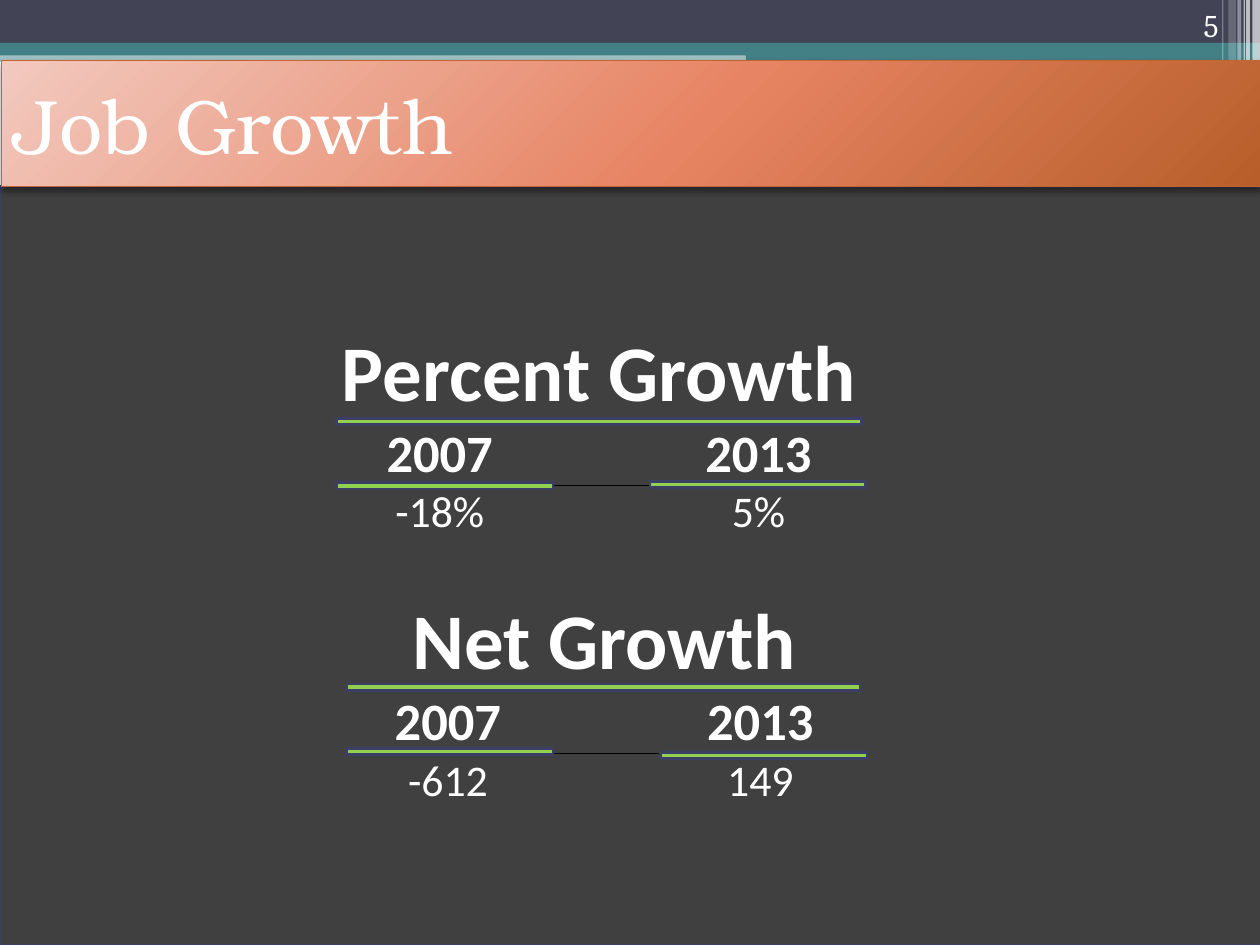
from lxml import etree
from pptx import Presentation
from pptx.dml.color import RGBColor
from pptx.enum.shapes import MSO_SHAPE
from pptx.enum.text import MSO_ANCHOR, PP_ALIGN
from pptx.oxml.ns import qn
from pptx.util import Inches, Pt

RECT, ROUNDED = MSO_SHAPE.RECTANGLE, MSO_SHAPE.ROUNDED_RECTANGLE
LEFT, CENTER, RIGHT = PP_ALIGN.LEFT, PP_ALIGN.CENTER, PP_ALIGN.RIGHT
MIDDLE, BOTTOM = MSO_ANCHOR.MIDDLE, MSO_ANCHOR.BOTTOM

SLIDE_WIDTH, SLIDE_HEIGHT = Inches(10), Inches(7.5)
COLUMN, ROW = SLIDE_WIDTH / 100, SLIDE_HEIGHT / 75
COLORS = {
    "white": "FFFFFF", "black": "000000", "teal": "438086", "slate": "424456",
    "panel": "404040", "outline": "3D3E66", "green": "92D050", "rust": "C4652D",
    "blush": "F2C9BF", "coral": "E78463", "copper": "B75E2A",
}
TITLE_STOPS = [(0, "blush"), (55, "coral"), (100, "copper")]
PLAIN_TABLE_STYLE = "{2D5ABB26-0587-4C30-8999-92F81FD0307C}"


def grid(left, top, width, height):
    return [round(left * COLUMN), round(top * ROW),
            round(width * COLUMN), round(height * ROW)]


def element(parent, tag, **attributes):
    return etree.SubElement(parent, qn(tag), {k: str(v) for k, v in attributes.items()})


def hex_color(parent, color, opacity=100):
    node = element(parent, "a:srgbClr", val=COLORS[color])
    if opacity < 100:
        element(node, "a:alpha", val=opacity * 1000)


def add_block(slide, area, color, opacity=100, outline=None, weight=1.5, preset=RECT):
    block = slide.shapes.add_shape(preset, *grid(*area))
    block.shadow.inherit = False
    block.fill.solid()
    block.fill.fore_color.rgb = RGBColor.from_string(COLORS[color])
    if opacity < 100:
        fill_color = block.fill._xPr.find(qn("a:solidFill"))[0]
        element(fill_color, "a:alpha", val=opacity * 1000)
    if outline:
        block.line.color.rgb = RGBColor.from_string(COLORS[outline])
        block.line.width = Pt(weight)
    else:
        block.line.fill.background()
    return block


def write(frame, text, font, size, align, bold=False):
    paragraph = frame.paragraphs[0]
    paragraph.alignment = align
    run = paragraph.add_run()
    run.text = text
    run.font.name, run.font.size, run.font.bold = font, Pt(size), bold
    run.font.color.rgb = RGBColor.from_string(COLORS["white"])


def add_header(slide):
    add_block(slide, (0, 4, 100, 0.9), "teal", 50)
    add_block(slide, (0, 0, 100, 3.4), "slate")
    add_block(slide, (0, 3.4, 100, 1), "teal")
    add_block(slide, (59.2, 3.9, 40.8, 1), "teal")
    add_block(slide, (59.2, 4.8, 40.8, 2), "teal", 50)
    for area in [(59.1, 5.4, 33.5, 0.3), (80.6, 6.4, 17.5, 0.4)]:
        add_block(slide, area, "white", preset=ROUNDED)
    for left, width, height, opacity in [
        (99.4, 0.6, 6.8, 65), (98.9, 0.3, 6.8, 65), (98.7, 0.1, 6.8, 60),
        (98.2, 0.3, 6.8, 40), (97.5, 0.6, 6.4, 20), (97, 0.1, 6.4, 30),
    ]:
        add_block(slide, (left, 0, width, height), "white", opacity)


def add_page_number(slide, number):
    frame = slide.shapes.add_textbox(*grid(89.4, 0, 8.3, 4)).text_frame
    frame.word_wrap = True
    frame.vertical_anchor = BOTTOM
    write(frame, number, "Cambria", 18, RIGHT)


def add_title(slide, text):
    banner = add_block(slide, (0.1, 4.8, 100, 10), "coral", outline="rust", weight=0.75)
    banner.fill.gradient()
    properties = banner.fill._xPr
    gradient = properties.find(qn("a:gradFill"))
    gradient.clear()
    stops = element(gradient, "a:gsLst")
    for position, color in TITLE_STOPS:
        hex_color(element(stops, "a:gs", pos=position * 1000), color)
    circle = element(gradient, "a:path", path="circle")
    element(circle, "a:fillToRect", l=-40000, t=-90000, r=140000, b=190000)
    shadow = element(properties.find(qn("a:effectLst")), "a:outerShdw",
                     blurRad=Pt(4), dist=Pt(2), dir=90 * 60000, rotWithShape=0)
    hex_color(shadow, "black", 45)
    banner.text_frame.vertical_anchor = MIDDLE
    write(banner.text_frame, text, "TeX Gyre Bonum", 44, LEFT)


def add_border(cell, side):
    line = element(cell._tc.get_or_add_tcPr(), side, w=Pt(0.5))
    hex_color(element(line, "a:solidFill"), "black")


def add_growth_table(slide, area, widths, heading, years, values):
    table = slide.shapes.add_table(3, 3, *grid(*area)).table
    table.first_row = table.horz_banding = False
    table._tbl.tblPr.find(qn("a:tableStyleId")).text = PLAIN_TABLE_STYLE
    for column, width in zip(table.columns, widths):
        column.width = round(width * COLUMN)
    for row, height in zip(table.rows, (5.4, 3.2, 2.6)):
        row.height = round(height * ROW)
    table.cell(0, 0).merge(table.cell(0, 2))
    lines = [([heading, "", ""], 45, True),
             ([years[0], "", years[1]], 30, True),
             ([values[0], "", values[1]], 25, False)]
    for r, (texts, size, bold) in enumerate(lines):
        for c, text in enumerate(texts):
            cell = table.cell(r, c)
            cell.margin_left = cell.margin_right = cell.margin_top = Inches(0.01)
            cell.margin_bottom = 0
            cell.vertical_anchor = BOTTOM
            if r == 1 or (r == 2 and c != 1):
                add_border(cell, "a:lnT")
            if r == 0 or (r == 1 and c != 1):
                add_border(cell, "a:lnB")
            cell.fill.background()
            if text:
                write(cell.text_frame, text, "Calibri", size, CENTER, bold)


def add_rules(slide, rules):
    for left, top, width in rules:
        add_block(slide, (left, top, width, 0.5), "green", outline="outline")


def main():
    deck = Presentation()
    deck.slide_width, deck.slide_height = SLIDE_WIDTH, SLIDE_HEIGHT
    slide = deck.slides.add_slide(deck.slide_layouts[6])
    add_header(slide)
    add_block(slide, (0, 14.8, 100.1, 60.2), "panel", outline="outline")
    add_page_number(slide, "5")
    add_title(slide, "Job Growth")
    years = ("2007", "2013")
    add_growth_table(slide, (27.5, 47.1, 40.8, 11.2), (16.1, 8.7, 16.1),
                     "Net Growth", years, ("-612", "149"))
    add_growth_table(slide, (26.7, 25.8, 41.7, 11.2), (16.4, 8.9, 16.4),
                     "Percent Growth", years, ("-18%", "5%"))
    add_rules(slide, [(26.7, 33.2, 41.7), (26.7, 38.3, 17.2), (51.6, 38.2, 17.1),
                      (27.5, 54.3, 40.8), (27.5, 59.4, 16.4), (52.4, 59.7, 16.4)])
    deck.save("out.pptx")


if __name__ == "__main__":
    main()
